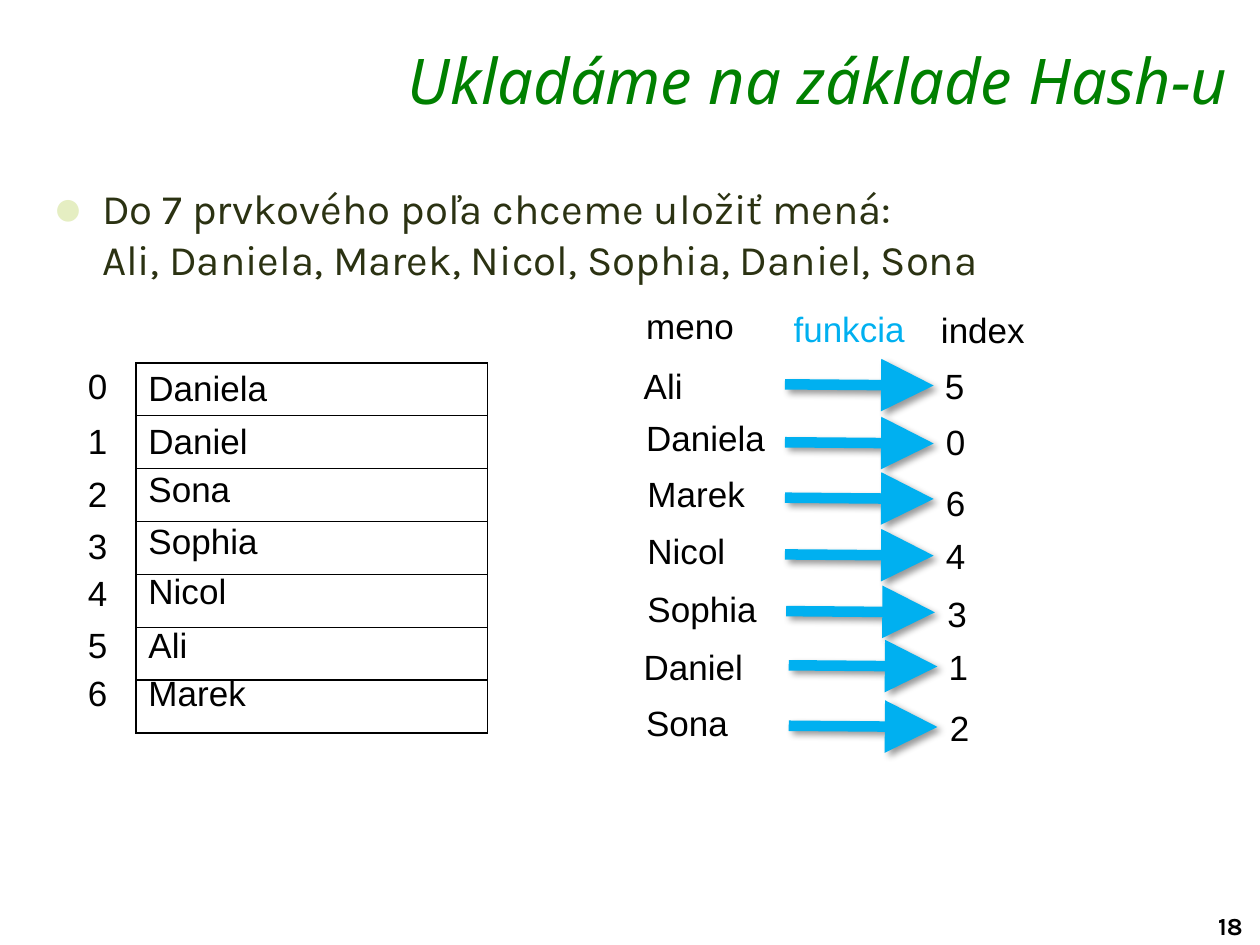
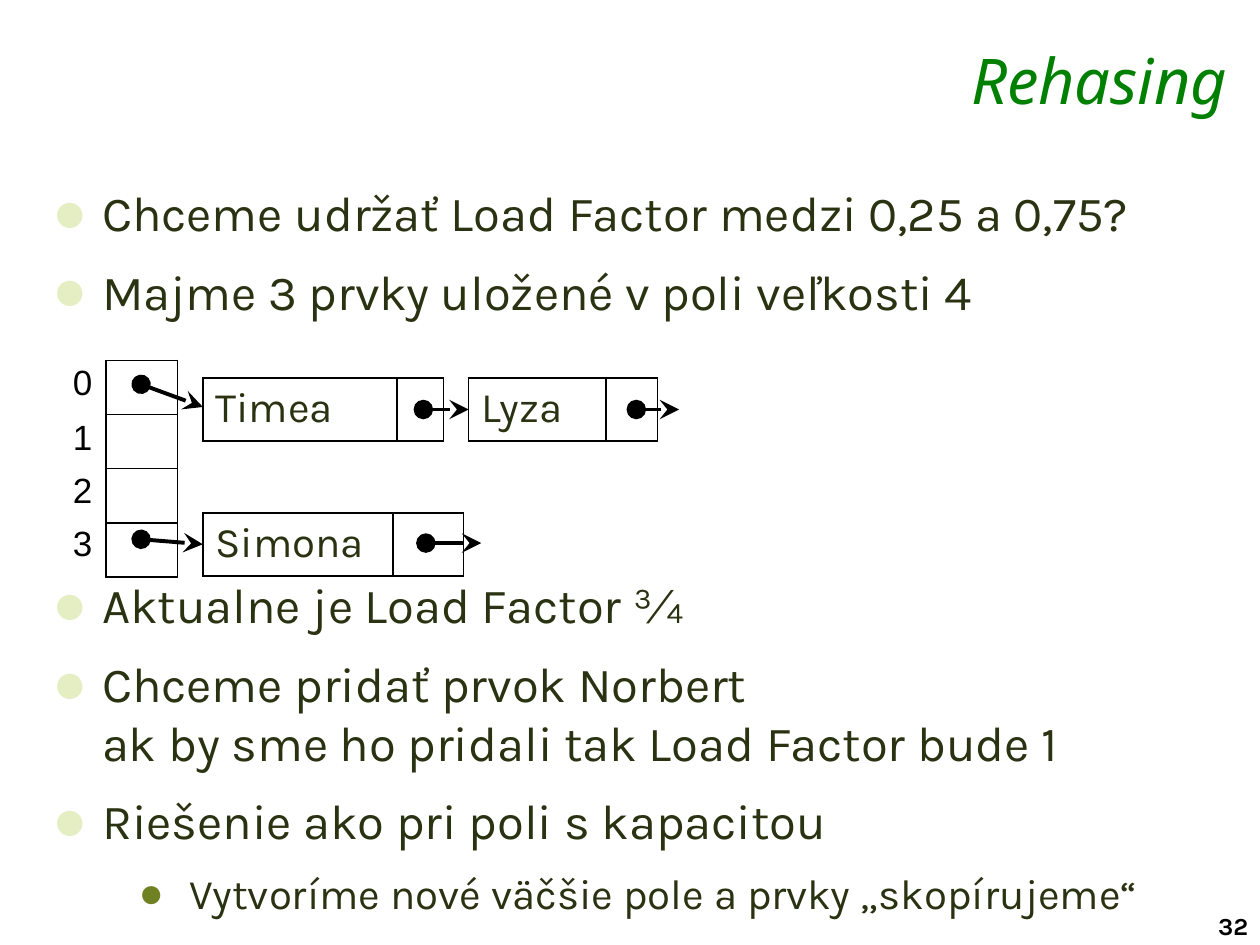
from lxml import etree
from pptx import Presentation
from pptx import util as u
from pptx.dml.color import RGBColor
from pptx.enum import shapes, text
from pptx.oxml import parse_xml
from pptx.oxml.ns import nsdecls, qn

HUES = {"title": "008000", "body": "2B3212", "dot": "E5EEC2", "subdot": "6E8224",
        "ink": "000000", "arrow": "00B0F0", "cell": "FFFFFF"}
SANS, KARLA, NOTO = "Arial", "Karla", "Noto Sans"

# Slide 1: (text, level, size, space before)
HASH = [("Do 7 prvkového poľa chceme uložiť mená:\n"
         "Ali, Daniela, Marek, Nicol, Sophia, Daniel, Sona", 0, 24, 0)]
# label, left, top, width, colour
HEADS = [("meno", 5.03, 2.37, 0.9, "ink"), ("funkcia", 6.2, 2.39, 1.09, "arrow"),
         ("index", 7.37, 2.4, 0.87, "ink")]
# name, width, left, top, index, index left, index top, arrow left, arrow top
NAMES = [("Ali", 0.52, 5.01, 2.84, 5, 7.4, 2.84, 6.23, 3.05),
         ("Daniela", 1.16, 5.03, 3.26, 0, 7.41, 3.29, 6.23, 3.51),
         ("Marek", 0.98, 5.04, 3.7, 6, 7.41, 3.77, 6.23, 3.95),
         ("Nicol", 0.83, 5.04, 4.15, 4, 7.41, 4.19, 6.23, 4.4),
         ("Sophia", 1.08, 5.04, 4.61, 3, 7.42, 4.65, 6.24, 4.85),
         ("Daniel", 1.0, 5.01, 5.07, 1, 7.43, 5.07, 6.26, 5.28),
         ("Sona", 0.86, 5.03, 5.52, 2, 7.44, 5.56, 6.26, 5.76)]
KEYS = [2.84, 3.28, 3.7, 4.11, 4.49, 4.9, 5.28]    # tops of the array numbers
SLOTS = [2.86, 3.28, 3.66, 4.07, 4.47, 4.9, 5.28]  # tops of the stored names

# Slide 2
REHASH = [("Chceme udržať Load Factor medzi 0,25 a 0,75?", 0, 28, 0),
          ("Majme 3 prvky uložené v poli veľkosti 4", 0, 28, 5.6),
          ("Aktualne je Load Factor ¾", 0, 28, 140),
          ("Chceme pridať prvok Norbert\nak by sme ho pridali tak Load Factor bude 1", 0, 28, 5.6),
          ("Riešenie ako pri poli s kapacitou", 0, 28, 5.6),
          ("Vytvoríme nové väčšie pole a prvky „skopírujeme“", 1, 24, 4.8)]
BINS = [2.81, 3.25, 3.67, 4.09]
# name, left, top, column widths
NODES = [("Timea", 1.61, 3, (1.54, 0.37)), ("Simona", 1.61, 4.07, (1.51, 0.56)),
         ("Lyza", 3.72, 3, (1.09, 0.41))]
LINKS = [(1.12, 3.05, 1.61, 3.23), (3.36, 3.25, 3.72, 3.25), (1.12, 4.28, 1.61, 4.32),
         (3.38, 4.31, 3.82, 4.31), (5.05, 3.25, 5.39, 3.25)]


def place(shape, *box):
    shape.left, shape.top, shape.width, shape.height = map(u.Inches, box)


def write(para, words, size, font, hue, bold=False, slant=False):
    """Add each line of words as a run."""
    for i, line in enumerate(words.split("\n")):
        if i:
            para.add_line_break()
        run = para.add_run()
        run.text = line
        face = run.font
        face.name, face.size, face.bold, face.italic = font, u.Pt(size), bold, slant
        face.color.rgb = RGBColor.from_string(HUES[hue])


def label(slide, words, left, top, width=0.36, hue="ink"):
    box = slide.shapes.add_textbox(*map(u.Inches, (left, top, width, 0.44)))
    box.text_frame.word_wrap = False
    write(box.text_frame.paragraphs[0], str(words), 20, SANS, hue)


def bullet(para, level):
    props = para._p.get_or_add_pPr()
    left, hang = [(0.39, 0.39), (1.08, 0.4)][level]
    props.set("marL", str(u.Inches(left)))
    props.set("indent", str(-u.Inches(hang)))
    tint = etree.SubElement(props, qn("a:buClr"))
    etree.SubElement(tint, qn("a:srgbClr"), val=HUES[["dot", "subdot"][level]])
    etree.SubElement(props, qn("a:buSzPct"), val=["120000", "100000"][level])
    etree.SubElement(props, qn("a:buChar"), char="●")


def start(deck, title, items, number, width, height):
    """Make a slide with its title, list and page number."""
    slide = deck.slides.add_slide(deck.slide_layouts[1])
    head, body = slide.placeholders
    place(head, 2.29, 0.31, 7.55, 0.58)
    frame = head.text_frame
    frame.auto_size = text.MSO_AUTO_SIZE.NONE
    frame.vertical_anchor = text.MSO_ANCHOR.TOP
    frame.margin_top = u.Inches(0.02)
    frame.paragraphs[0].alignment = text.PP_ALIGN.RIGHT
    write(frame.paragraphs[0], title, 36, NOTO, "title", slant=True)

    place(body, 0.32, 1.4, width, height)
    frame = body.text_frame
    frame.auto_size = text.MSO_AUTO_SIZE.NONE
    for i, (words, level, size, gap) in enumerate(items):
        para = frame.add_paragraph() if i else frame.paragraphs[0]
        para.level = level
        bullet(para, level)
        para.space_before, para.space_after = u.Pt(gap), u.Pt(size * 0.2)
        write(para, words, size, KARLA, "body")

    page = slide.shapes.add_textbox(*map(u.Inches, (9.57, 7.18, 0.51, 0.33)))
    page.text_frame.word_wrap = True
    write(page.text_frame.paragraphs[0], str(number), 14, KARLA, "ink", bold=True)
    return slide


def grid(slide, left, top, cols, rows, high, words=""):
    """Add a white table with thin black borders and words in its first cell."""
    frame = slide.shapes.add_table(rows, len(cols), *map(
        u.Inches, (left, top, sum(cols), rows * high)))
    table = frame.table
    table.first_row = table.horz_banding = False
    for col, wide in zip(table.columns, cols):
        col.width = u.Inches(wide)
    for row in table.rows:
        row.height = u.Inches(high)
    for cell in table.iter_cells():
        props = cell._tc.get_or_add_tcPr()
        for side in "LRTB":
            edge = etree.SubElement(props, qn(f"a:ln{side}"), w=str(u.Pt(1)))
            fill = etree.SubElement(edge, qn("a:solidFill"))
            etree.SubElement(fill, qn("a:srgbClr"), val=HUES["ink"])
        cell.fill.solid()
        cell.fill.fore_color.rgb = RGBColor.from_string(HUES["cell"])
    if words:
        write(table.cell(0, 0).text_frame.paragraphs[0], words, 24, KARLA, "body")


def arrow(slide, ends, hue, width, tail, head=None, shade=False):
    link = slide.shapes.add_connector(shapes.MSO_CONNECTOR.STRAIGHT, *map(u.Inches, ends))
    link.line.color.rgb = RGBColor.from_string(HUES[hue])
    link.line.width = u.Pt(width)
    line = link.line._get_or_add_ln()
    for tag, kind in (("a:headEnd", head), ("a:tailEnd", tail)):
        if kind:
            etree.SubElement(line, qn(tag), type=kind, w="lg", len="lg")
    glow = (f'<a:outerShdw blurRad="{u.Pt(4)}" dist="{u.Pt(3)}" dir="2700000">'
            f'<a:srgbClr val="{HUES["ink"]}"><a:alpha val="40000"/></a:srgbClr>'
            '</a:outerShdw>') if shade else ""
    link._element.spPr.append(parse_xml(
        f'<a:effectLst {nsdecls("a")}>{glow}</a:effectLst>'))


def main():
    deck = Presentation()
    deck.slide_width, deck.slide_height = u.Inches(10), u.Inches(7.5)

    slide = start(deck, "Ukladáme na základe Hash-u", HASH, 18, 9.38, 1.25)
    grid(slide, 1.08, 2.88, [2.79], 7, 0.42)
    for key, top in enumerate(KEYS):
        label(slide, key, 0.6, top)
    for words, left, top, width, hue in HEADS:
        label(slide, words, left, top, width, hue)
    for name, width, left, top, key, key_x, key_y, x, y in NAMES:
        label(slide, name, left, top, width)
        arrow(slide, (x, y, x + 1.18, y + 0.01), "arrow", 6, "triangle", shade=True)
        label(slide, key, key_x, key_y)
        label(slide, name, 1.08, SLOTS[key], width)

    slide = start(deck, "Rehasing", REHASH, 32, 9.19, 3.88)
    for key, top in enumerate(BINS):
        label(slide, key, 0.48, top)
    grid(slide, 0.84, 2.86, [0.57], 4, 0.43)
    for name, left, top, cols in NODES:
        grid(slide, left, top, cols, 1, 0.5, name)
    for ends in LINKS:
        arrow(slide, ends, "ink", 2.25, "stealth", head="oval")

    deck.save("out.pptx")


if __name__ == "__main__":
    main()
